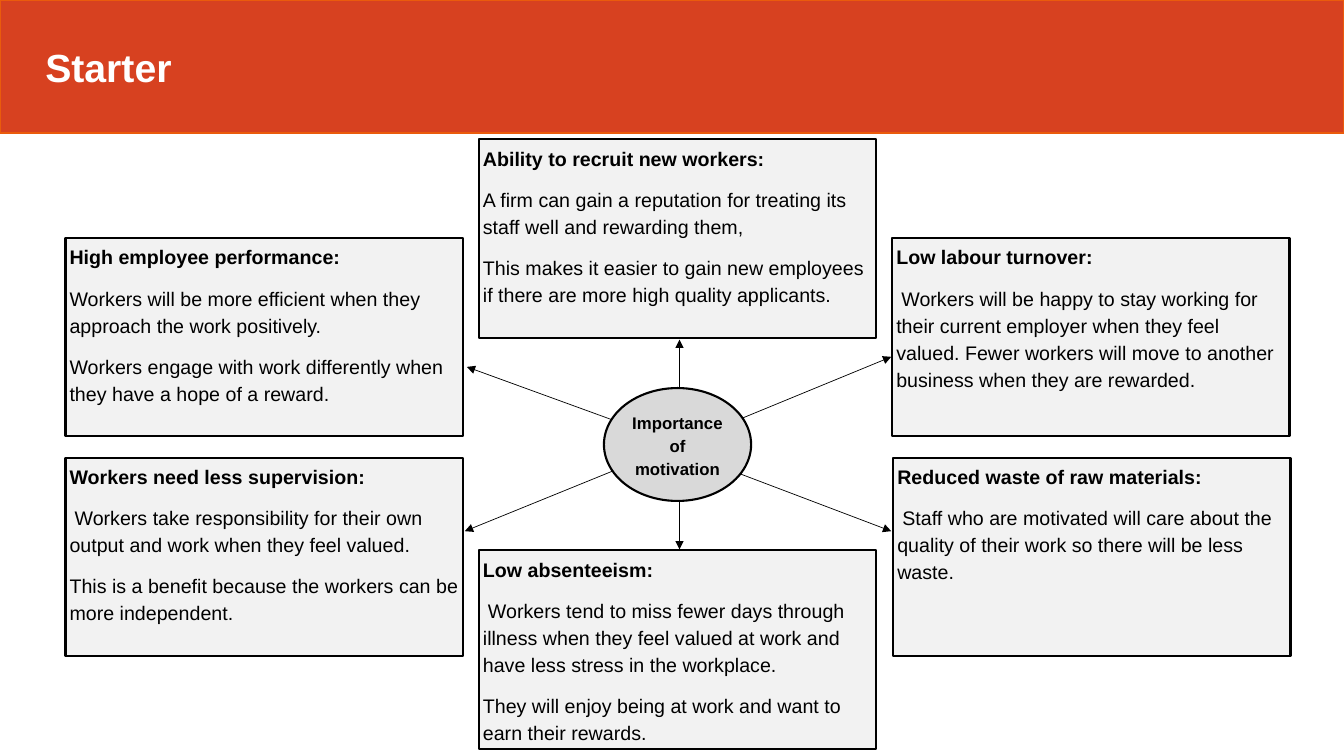
from dataclasses import dataclass

from lxml.etree import SubElement
from pptx import Presentation
from pptx.dml.color import RGBColor
from pptx.enum.shapes import MSO_CONNECTOR as CONN, MSO_SHAPE as SHAPE
from pptx.enum.text import MSO_ANCHOR as ANCHOR, PP_ALIGN as ALIGN
from pptx.oxml.ns import qn
from pptx.shapes.autoshape import Shape
from pptx.slide import Slide
from pptx.text.text import TextFrame
from pptx.util import Inches, Pt

COLORS = {
    "band": "D74120",
    "band_line": "EA5B0C",
    "box": "F2F2F2",
    "hub": "D9D9D9",
    "ink": "000000",
    "title": "FFFFFF",
}
BOX_W, BOX_H = 3.94, 1.97
LEFT, MIDDLE, RIGHT = 0.65, 4.75, 8.85
INSET = 0.04
LEAD_INDENT = 0.05


@dataclass
class Benefit:
    left: float
    top: float
    heading: str
    body: list[str]
    lead_indent: float = 0


@dataclass
class Arrow:
    start: tuple[float, float]
    end: tuple[float, float]


BENEFITS = [
    Benefit(LEFT, 2.36, "High employee performance:", [
        "Workers will be more efficient when they approach the work positively.",
        "Workers engage with work differently when they have a hope of a reward."]),
    Benefit(RIGHT, 2.36, "Low labour turnover:", [
        "Workers will be happy to stay working for their current employer when they "
        "feel valued. Fewer workers will move to another business when they are "
        "rewarded."], LEAD_INDENT),
    Benefit(MIDDLE, 1.38, "Ability to recruit new workers:", [
        "A firm can gain a reputation for treating its staff well and rewarding them,",
        "This makes it easier to gain new employees if there are more high quality "
        "applicants."]),
    Benefit(LEFT, 4.54, "Workers need less supervision:", [
        "Workers take responsibility for their own output and work when they feel "
        "valued.",
        "This is a benefit because the workers can be more independent."], LEAD_INDENT),
    Benefit(MIDDLE, 5.46, "Low absenteeism:", [
        "Workers tend to miss fewer days through illness when they feel valued at "
        "work and have less stress in the workplace.",
        "They will enjoy being at work and want to earn their rewards."], LEAD_INDENT),
    Benefit(RIGHT + 0.01, 4.54, "Reduced waste of raw materials:", [
        "Staff who are motivated will care about the quality of their work so there "
        "will be less waste."], LEAD_INDENT),
]

ARROWS = [
    Arrow((6.74, 4.04), (6.74, 3.37)),
    Arrow((6.74, 4.86), (6.74, 5.45)),
    Arrow((6.58, 4.35), (4.63, 3.64)),
    Arrow((6.7, 4.42), (4.61, 5.27)),
    Arrow((6.89, 4.53), (8.84, 5.27)),
    Arrow((6.75, 4.4), (8.84, 3.54)),
]


def rgb(name: str) -> RGBColor:
    return RGBColor.from_string(COLORS[name])


def add_panel(s: Slide, kind: SHAPE, at: tuple[float, float, float, float], fill: str,
              line: str = "ink", line_pt: float = 1.5, anchor: ANCHOR = ANCHOR.TOP,
              margin_left: float = INSET) -> Shape:
    """Add a filled, outlined shape ready to hold text."""
    sp = s.shapes.add_shape(kind, *map(Inches, at))
    sp.shadow.inherit = False
    sp.fill.solid()
    sp.fill.fore_color.rgb = rgb(fill)
    sp.line.color.rgb = rgb(line)
    sp.line.width = Pt(line_pt)
    frame_format = {
        "word_wrap": True,
        "vertical_anchor": anchor,
        "margin_left": Inches(margin_left),
        "margin_right": Inches(INSET),
        "margin_top": Inches(INSET),
        "margin_bottom": Inches(INSET),
    }
    for name, value in frame_format.items():
        setattr(sp.text_frame, name, value)
    return sp


def write(tf: TextFrame, texts: list[str], size: float, color: str = "ink",
          align: ALIGN = ALIGN.LEFT, spacing: float = 1.15, before: float = 0,
          lead_indent: float = 0) -> None:
    """Write a bold first paragraph, then plain ones, the second with a lead indent."""
    for i, text in enumerate(texts):
        p = tf.add_paragraph() if i else tf.paragraphs[0]
        para_format = {"alignment": align, "line_spacing": spacing,
                       "space_before": Pt(before)}
        for name, value in para_format.items():
            setattr(p, name, value)
        if i == 1 and lead_indent:
            p._p.get_or_add_pPr().set("indent", str(Inches(lead_indent)))
        r = p.add_run()
        r.text = text
        for name, value in {"name": "Arial", "size": Pt(size), "bold": i == 0}.items():
            setattr(r.font, name, value)
        r.font.color.rgb = rgb(color)


def add_arrow(s: Slide, arrow: Arrow) -> None:
    ends = map(Inches, (*arrow.start, *arrow.end))
    c = s.shapes.add_connector(CONN.STRAIGHT, *ends)
    c.line.color.rgb = rgb("ink")
    c.line.width = Pt(0.5)
    SubElement(c.line._get_or_add_ln(), qn("a:tailEnd"), type="triangle")
    SubElement(c._element.spPr, qn("a:effectLst"))


def main() -> None:
    prs = Presentation()
    prs.slide_width, prs.slide_height = Inches(13.33), Inches(7.5)
    s = prs.slides.add_slide(prs.slide_layouts[6])

    band = add_panel(s, SHAPE.RECTANGLE, (0, 0, 13.33, 1.32), "band", "band_line", 1,
                     ANCHOR.MIDDLE, margin_left=0.45)
    write(band.text_frame, ["Starter"], 28, "title", spacing=1.0)

    for b in BENEFITS:
        box = add_panel(s, SHAPE.RECTANGLE, (b.left, b.top, BOX_W, BOX_H), "box")
        write(box.text_frame, [b.heading, *b.body], 14, before=10,
              lead_indent=b.lead_indent)

    for arrow in ARROWS:
        add_arrow(s, arrow)

    hub = add_panel(s, SHAPE.OVAL, (5.99, 3.85, 1.46, 1.12), "hub", anchor=ANCHOR.MIDDLE)
    write(hub.text_frame, ["Importance of motivation"], 12, align=ALIGN.CENTER)

    prs.save("out.pptx")


if __name__ == "__main__":
    main()
